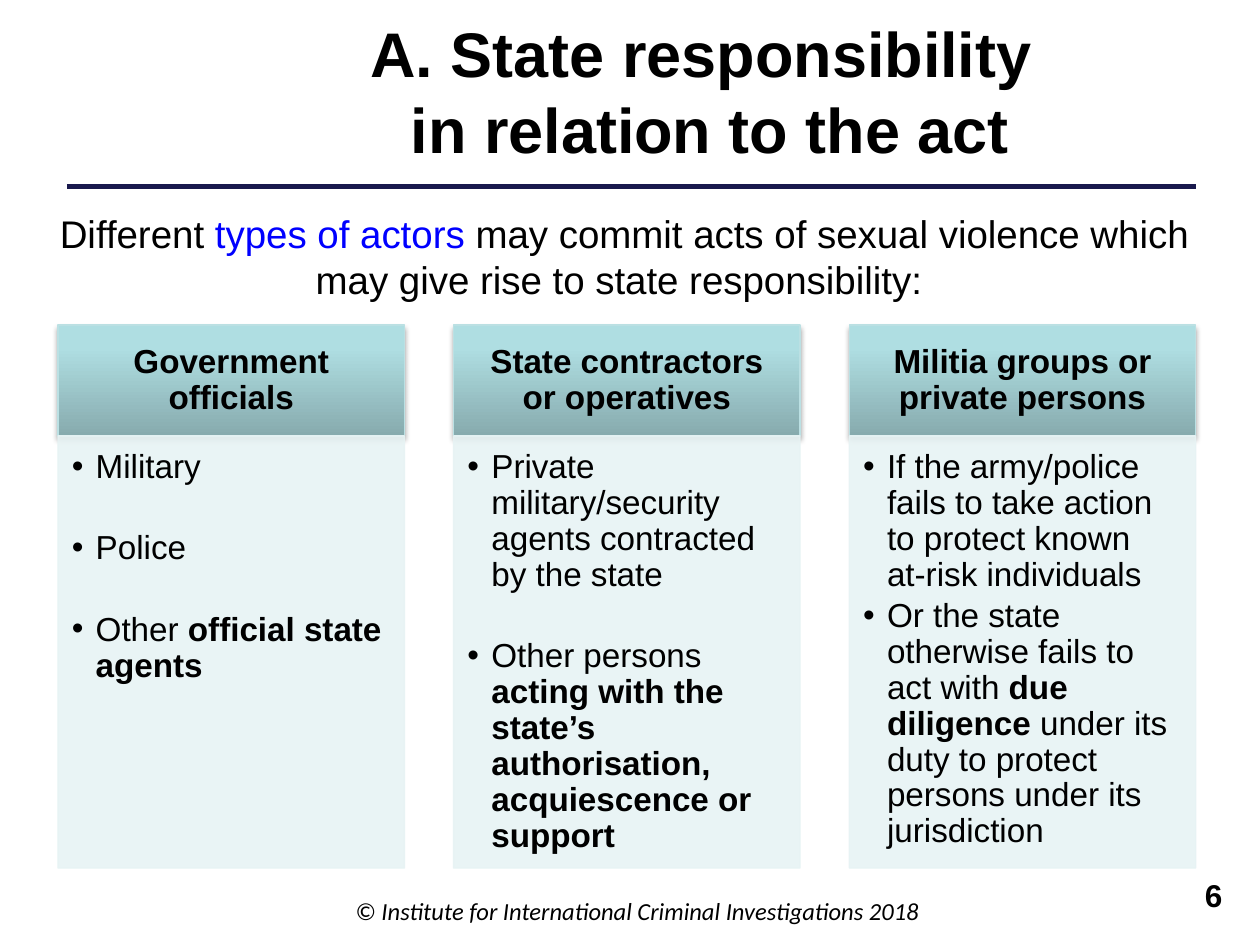
import copy
import pptx
import pptx.dml.color
import pptx.enum.shapes
import pptx.enum.text
import pptx.oxml.ns
import pptx.util
from lxml import etree

Inches = pptx.util.Inches
Pt = pptx.util.Pt
RGBColor = pptx.dml.color.RGBColor
ALIGN = pptx.enum.text.PP_ALIGN
ANCHOR = pptx.enum.text.MSO_ANCHOR
qn = pptx.oxml.ns.qn

BLACK = RGBColor(0x00, 0x00, 0x00)
BLUE = RGBColor(0x00, 0x00, 0xFF)
NAVY = RGBColor(0x19, 0x19, 0x4D)
EDGE = RGBColor(0xBB, 0xE0, 0xE3)
PALE = RGBColor(0xE7, 0xF3, 0xF4)
SHADES = [
    (0, RGBColor(0x87, 0xAB, 0xAE)),
    (0.8, RGBColor(0xAF, 0xDE, 0xE2)),
    (1, RGBColor(0xAF, 0xE0, 0xE4)),
]

LEFT, STEP, WIDTH = 0.46, 3.14, 2.75
TIGHT, LOOSE = 0, 23

COLUMNS = [
    ("Government officials", LOOSE, [
        [("Military", False)],
        [("Police", False)],
        [("Other ", False), ("official state agents", True)],
    ]),
    ("State contractors or operatives", LOOSE, [
        [("Private military/security agents contracted by the state", False)],
        [("Other persons ", False),
         ("acting with the state’s authorisation, acquiescence or support", True)],
    ]),
    ("Militia groups or private persons", TIGHT, [
        [("If the army/police fails to take action to protect known "
          "at-risk individuals", False)],
        [("Or the state otherwise fails to act with ", False),
         ("due diligence ", True),
         ("under its duty to protect persons under its jurisdiction", False)],
    ]),
]


def style(para, size, align, name="Arial", bold=False, italic=False):
    para.alignment = align
    font = para.font
    font.name, font.size = name, Pt(size)
    font.bold, font.italic = bold, italic
    font.color.rgb = BLACK


def add_text(slide, left, top, width, height, anchor=ANCHOR.TOP):
    box = slide.shapes.add_textbox(
        Inches(left), Inches(top), Inches(width), Inches(height))
    frame = box.text_frame
    frame.word_wrap = True
    frame.vertical_anchor = anchor
    return frame.paragraphs[0]


def add_rule(slide):
    rule = slide.shapes.add_connector(
        pptx.enum.shapes.MSO_CONNECTOR.STRAIGHT,
        Inches(0.53), Inches(1.48), Inches(9.49), Inches(1.48))
    rule.line.color.rgb = NAVY
    rule.line.width = Pt(2.5)
    etree.SubElement(rule._element.spPr, qn("a:effectLst"))


def add_panel(slide, left, top, height, edge, pads, anchor):
    panel = slide.shapes.add_shape(
        pptx.enum.shapes.MSO_SHAPE.RECTANGLE,
        Inches(left), Inches(top), Inches(WIDTH), Inches(height))
    panel.shadow.inherit = False
    panel.line.color.rgb = edge
    panel.line.width = Pt(0.75)
    frame = panel.text_frame
    frame.word_wrap = True
    frame.vertical_anchor = anchor
    (frame.margin_left, frame.margin_top,
     frame.margin_right, frame.margin_bottom) = map(Inches, pads)
    return panel


def add_alpha(color, percent):
    etree.SubElement(color, qn("a:alpha"), val=str(percent * 1000))


def shade(panel):
    panel.fill.gradient()
    panel.fill.gradient_angle = 90
    props = panel._element.spPr
    stops = props.find(".//" + qn("a:gsLst"))
    stops.append(copy.deepcopy(stops[-1]))
    for stop, (place, color) in zip(panel.fill.gradient_stops, SHADES):
        stop.position = place
        stop.color.rgb = color
    shadow = etree.SubElement(
        props.find(qn("a:effectLst")), qn("a:outerShdw"),
        blurRad=str(Pt(3.1)), dist=str(Pt(1.8)), dir="5400000",
        rotWithShape="0")
    add_alpha(etree.SubElement(shadow, qn("a:srgbClr"), val="000000"), 35)


def add_head(slide, left, text):
    head = add_panel(slide, left, 2.58, 0.88, EDGE,
                     (0.15, 0.08, 0.15, 0.08), ANCHOR.MIDDLE)
    shade(head)
    para = head.text_frame.paragraphs[0]
    para.text = text
    para.line_spacing = 0.9
    style(para, 19, ALIGN.CENTER, bold=True)


def add_bullet(para):
    props = para._p.get_or_add_pPr()
    props.set("marL", str(Inches(0.19)))
    props.set("indent", str(-Inches(0.19)))
    etree.SubElement(props, qn("a:buFont"), typeface="Arial")
    etree.SubElement(props, qn("a:buChar"), char="•")


def add_body(slide, left, gap, items):
    body = add_panel(slide, left, 3.46, 3.43, PALE,
                     (0.11, 0.11, 0.15, 0.17), ANCHOR.TOP)
    body.fill.solid()
    body.fill.fore_color.rgb = PALE
    for color in body._element.spPr.iter(qn("a:srgbClr")):
        add_alpha(color, 90)
    frame = body.text_frame
    for index, parts in enumerate(items):
        para = frame.add_paragraph() if index else frame.paragraphs[0]
        add_bullet(para)
        style(para, 19, ALIGN.LEFT)
        para.line_spacing = 0.9
        para.space_before = Pt(gap if index else 0)
        para.space_after = Pt(3)
        for text, bold in parts:
            run = para.add_run()
            run.text = text
            run.font.bold = bold


def add_intro(slide):
    para = add_text(slide, 0.35, 1.62, 9.21, 0.84)
    style(para, 22, ALIGN.CENTER)
    for text, color in [
        ("Different ", BLACK),
        ("types of actors ", BLUE),
        ("may commit acts of sexual violence which may give rise to "
         "state responsibility: ", BLACK),
    ]:
        run = para.add_run()
        run.text = text
        run.font.color.rgb = color


def main():
    deck = pptx.Presentation()
    deck.slide_width, deck.slide_height = Inches(10), Inches(7.5)
    slide = deck.slides.add_slide(deck.slide_layouts[6])
    add_rule(slide)

    title = add_text(slide, 1.54, 0.06, 8.19, 1.31, ANCHOR.MIDDLE)
    title.text = "A. State responsibility \vin relation to the act"
    style(title, 36, ALIGN.CENTER, bold=True)

    foot = add_text(slide, 2.56, 7.06, 5, 0.39)
    foot.text = "© Institute for International Criminal Investigations 2018"
    style(foot, 14, ALIGN.CENTER, name="Calibri", italic=True)

    number = add_text(slide, 9.25, 6.9, 0.55, 0.4)
    number.text = "6"
    style(number, 18, ALIGN.RIGHT, bold=True)

    add_intro(slide)
    for index, (head, gap, items) in enumerate(COLUMNS):
        left = LEFT + index * STEP
        add_head(slide, left, head)
        add_body(slide, left, gap, items)
    deck.save("out.pptx")


if __name__ == "__main__":
    main()
